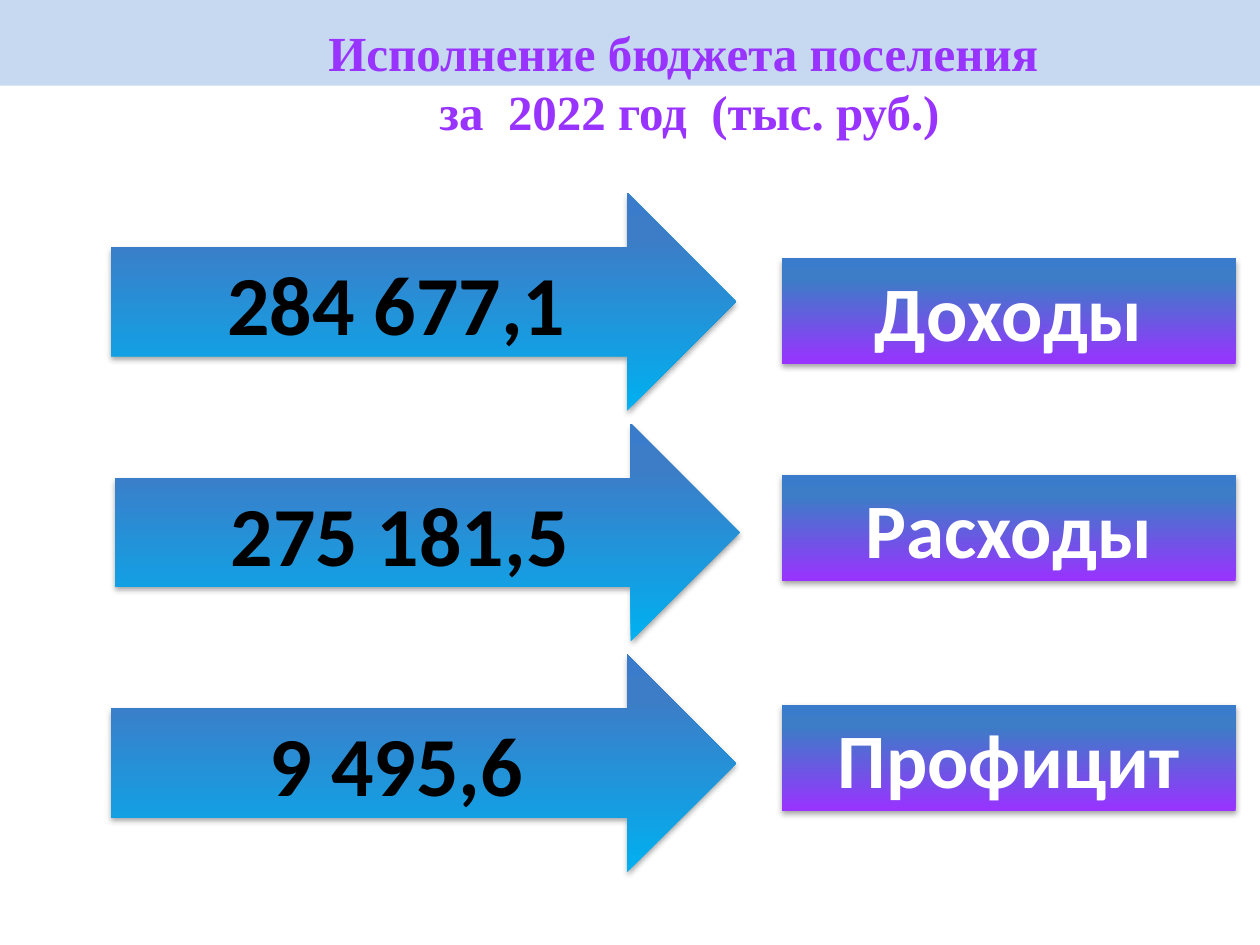
import copy

import lxml.etree
import pptx
import pptx.dml.color
import pptx.enum.shapes
import pptx.enum.text
import pptx.oxml.ns
import pptx.util

Cm = pptx.util.Cm
SHAPES = pptx.enum.shapes.MSO_SHAPE
TEXT = pptx.enum.text

TITLE = ["Исполнение бюджета поселения ", "за  2022 год  (тыс. руб.)"]
ROWS = [
    {"value": "284 677,1", "label": "Доходы", "arrow_left": 2.24, "label_top": 5.21},
    {"value": "275 181,5", "label": "Расходы", "arrow_left": 2.31, "label_top": 9.58},
    {"value": "9 495,6", "label": "Профицит", "arrow_left": 2.24, "label_top": 14.22},
]
ARROW_TOP, ARROW_STEP, ARROW_SIZE = 3.89, 4.65, (12.6, 4.39)
LABEL_LEFT, LABEL_SIZE = 15.77, (9.14, 2.13)
BLUE_STOPS = [(0.8, "3D7CC7"), (1, "3A7CCB")]
FORMATS = {
    "title": {"name": "Times New Roman", "size": pptx.util.Pt(28), "bold": True},
    "value": {"name": "Calibri", "size": pptx.util.Pt(48), "bold": True},
    "label": {"name": "Calibri", "size": pptx.util.Pt(44), "bold": True},
}


def rgb(color):
    return pptx.dml.color.RGBColor.from_string(color)


def write(shape, lines, style, color, anchor):
    frame = shape.text_frame
    frame.word_wrap = True
    frame.vertical_anchor = anchor
    for index, line in enumerate(lines):
        paragraph = frame.add_paragraph() if index else frame.paragraphs[0]
        paragraph.alignment = TEXT.PP_ALIGN.CENTER
        run = paragraph.add_run()
        run.text = line
        for attribute, value in FORMATS[style].items():
            setattr(run.font, attribute, value)
        run.font.color.rgb = rgb(color)


def add_plain_shape(slide, kind, box):
    shape = slide.shapes.add_shape(kind, *map(Cm, box))
    shape.shadow.inherit = False
    shape.line.fill.background()
    return shape


def fill_gradient(shape, stops):
    shape.fill.gradient()
    shape.fill.gradient_angle = 90
    stop_list = shape.element.spPr.find(".//" + pptx.oxml.ns.qn("a:gsLst"))
    stop_list.append(copy.deepcopy(stop_list[-1]))
    for stop, (position, color) in zip(shape.fill.gradient_stops, stops):
        stop.position = position
        stop.color.rgb = rgb(color)


def add_shadow(shape):
    qn = pptx.oxml.ns.qn
    effects = shape.element.spPr.find(qn("a:effectLst"))
    shadow = lxml.etree.SubElement(
        effects, qn("a:outerShdw"), blurRad="40000", dist="23000", dir="5400000", rotWithShape="0"
    )
    color = lxml.etree.SubElement(shadow, qn("a:srgbClr"), val="000000")
    lxml.etree.SubElement(color, qn("a:alpha"), val="35000")


def add_gradient_shape(slide, kind, box, bottom_color):
    shape = add_plain_shape(slide, kind, box)
    fill_gradient(shape, [(0, bottom_color)] + BLUE_STOPS)
    add_shadow(shape)
    return shape


def main():
    presentation = pptx.Presentation()
    presentation.slide_width, presentation.slide_height = Cm(25.4), Cm(19.05)
    slide = presentation.slides.add_slide(presentation.slide_layouts[6])

    band = add_plain_shape(slide, SHAPES.RECTANGLE, (0, 0, 25.4, 1.73))
    band.fill.solid()
    band.fill.fore_color.rgb = rgb("C6D9F1")

    for index, row in enumerate(ROWS):
        arrow_box = (row["arrow_left"], ARROW_TOP + index * ARROW_STEP, *ARROW_SIZE)
        arrow = add_gradient_shape(slide, SHAPES.RIGHT_ARROW, arrow_box, "00B0F0")
        write(arrow, [row["value"]], "value", "000000", TEXT.MSO_ANCHOR.MIDDLE)

    for row in ROWS:
        label_box = (LABEL_LEFT, row["label_top"], *LABEL_SIZE)
        label = add_gradient_shape(slide, SHAPES.RECTANGLE, label_box, "9933FF")
        write(label, [row["label"]], "label", "FFFFFF", TEXT.MSO_ANCHOR.TOP)
        label.text_frame.auto_size = TEXT.MSO_AUTO_SIZE.SHAPE_TO_FIT_TEXT

    title = slide.shapes.add_textbox(*map(Cm, (2.9, 0.33, 22, 2.64)))
    write(title, TITLE, "title", "9933FF", TEXT.MSO_ANCHOR.TOP)
    title.text_frame.auto_size = TEXT.MSO_AUTO_SIZE.SHAPE_TO_FIT_TEXT

    presentation.save("out.pptx")


if __name__ == "__main__":
    main()
